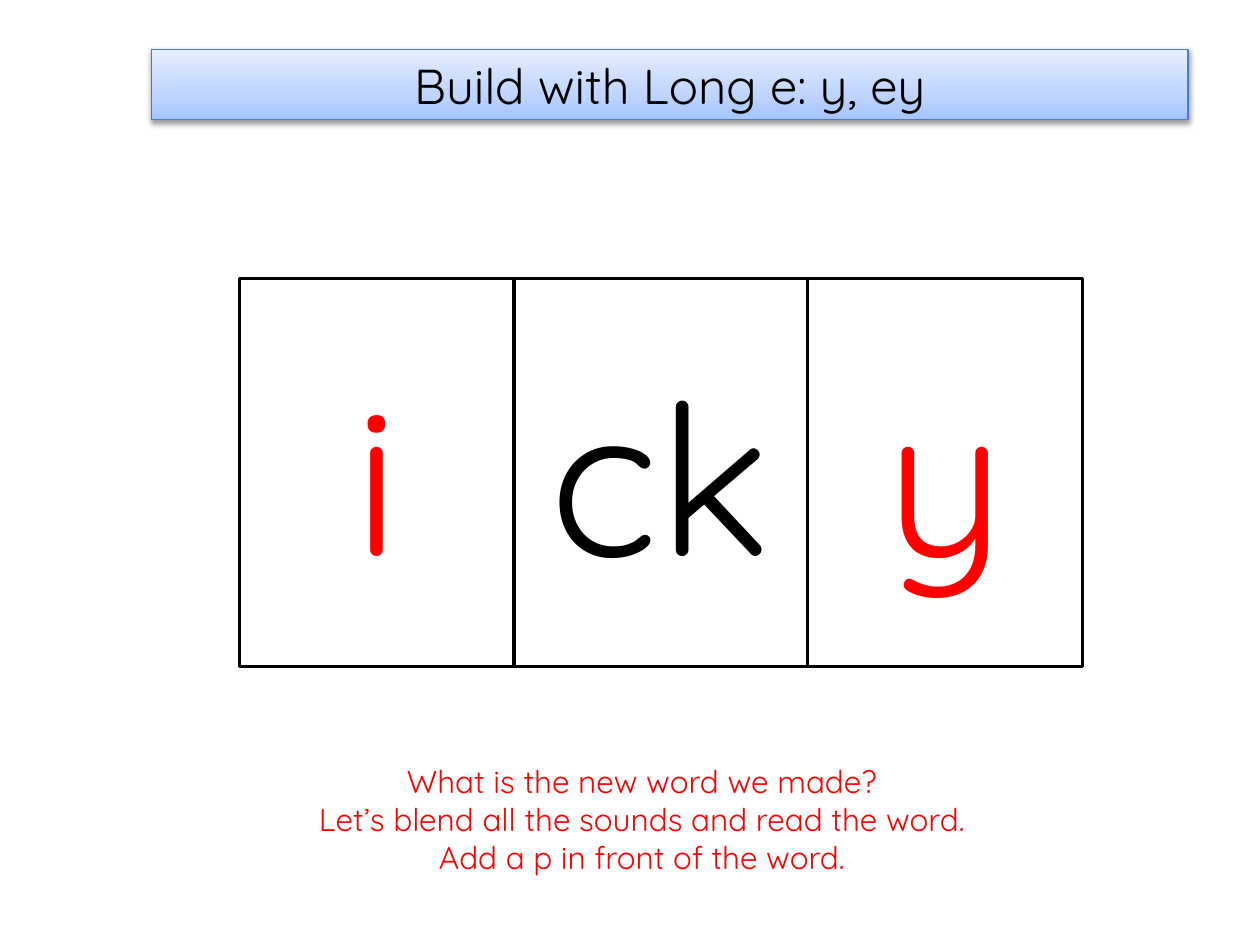
from lxml.etree import SubElement
from pptx import Presentation
from pptx.dml.color import RGBColor
from pptx.enum.shapes import MSO_SHAPE
from pptx.enum.text import MSO_ANCHOR, MSO_AUTO_SIZE, PP_ALIGN
from pptx.oxml.ns import qn
from pptx.util import Inches, Pt

FONT = "Quicksand"
COLORS = {
    "black": "000000",
    "white": "FFFFFF",
    "red": "FF0000",
    "banner_line": "4B7EBC",
    "banner_low": "A4C4FF",
    "banner_mid": "BFD4FF",
    "banner_high": "E6EEFF",
}
BANNER_STOPS = [(0, "banner_low"), (35, "banner_mid"), (100, "banner_high")]
SOUNDS = [("i", 2.18, "red"), ("ck", 2.33, "black"), ("y", 2.18, "red")]
PROMPTS = [
    "What is the new word we made?",
    "Let’s blend all the sounds and read the word.",
    "Add a p in front of the word.",
]


def rgb(color):
    """Return the named colour."""
    return RGBColor.from_string(COLORS[color])


def format_text(frame, size, color):
    """Centre every paragraph and set its font."""
    frame.word_wrap = True
    for paragraph in frame.paragraphs:
        paragraph.alignment = PP_ALIGN.CENTER
        for run in paragraph.runs:
            run.font.name = FONT
            run.font.size = Pt(size)
            run.font.color.rgb = rgb(color)


def set_line(shape, color, width):
    """Outline a shape."""
    shape.line.color.rgb = rgb(color)
    shape.line.width = Pt(width)


def add_color(parent, color):
    """Append a colour element and return it."""
    return SubElement(parent, qn("a:srgbClr"), val=COLORS[color])


def fill_gradient(shape, stops):
    """Fill a shape with a gradient that rises from its bottom edge."""
    shape.fill.gradient()
    shape.fill.gradient_angle = 90
    stop_list = shape._element.spPr.find(".//" + qn("a:gsLst"))
    for stop in list(stop_list):
        stop_list.remove(stop)
    for percent, color in stops:
        add_color(SubElement(stop_list, qn("a:gs"), pos=str(percent * 1000)), color)


def add_shadow(shape):
    """Drop a soft shadow straight below a shape."""
    shape.shadow.inherit = False
    effects = shape._element.spPr.find(qn("a:effectLst"))
    shadow = SubElement(
        effects, qn("a:outerShdw"), blurRad=str(Pt(3.1)), dist=str(Pt(1.6)),
        dir="5400000", rotWithShape="0",
    )
    SubElement(add_color(shadow, "black"), qn("a:alpha"), val="38000")


def place_title(slide, left, top, width, height):
    """Format the title placeholder as a banner."""
    title = slide.shapes.title
    title.left, title.top, title.width, title.height = left, top, width, height
    fill_gradient(title, BANNER_STOPS)
    set_line(title, "banner_line", 0.75)
    add_shadow(title)
    title.text_frame.text = "Build with Long e: y, ey"
    title.text_frame.vertical_anchor = MSO_ANCHOR.MIDDLE
    title.text_frame.auto_size = MSO_AUTO_SIZE.NONE
    format_text(title.text_frame, 28, "black")


def add_sound_cards(slide, left, top, height):
    """Add the sound cards side by side."""
    for sound, inches, color in SOUNDS:
        width = Inches(inches)
        card = slide.shapes.add_shape(MSO_SHAPE.RECTANGLE, left, top, width, height)
        card.shadow.inherit = False
        card.fill.solid()
        card.fill.fore_color.rgb = rgb("white")
        set_line(card, "black", 2)
        card.text_frame.text = sound
        card.text_frame.vertical_anchor = MSO_ANCHOR.MIDDLE
        format_text(card.text_frame, 120, color)
        left += width


def add_prompts(slide, left, top, width, height):
    """Add the teacher's prompts, one to a paragraph."""
    prompts = slide.shapes.add_textbox(left, top, width, height)
    prompts.text_frame.text = "\n".join(PROMPTS)
    format_text(prompts.text_frame, 18, "red")
    prompts.text_frame.auto_size = MSO_AUTO_SIZE.SHAPE_TO_FIT_TEXT


def main():
    """Build the slide and save it."""
    deck = Presentation()
    deck.slide_width, deck.slide_height = Inches(10), Inches(7.5)
    slide = deck.slides.add_slide(deck.slide_layouts[5])
    place_title(slide, Inches(1.2), Inches(0.39), Inches(8.23), Inches(0.56))
    add_sound_cards(slide, Inches(1.9), Inches(2.21), Inches(3.08))
    add_prompts(slide, Inches(1.61), Inches(6), Inches(6.97), Inches(1.01))
    deck.save("out.pptx")


if __name__ == "__main__":
    main()
